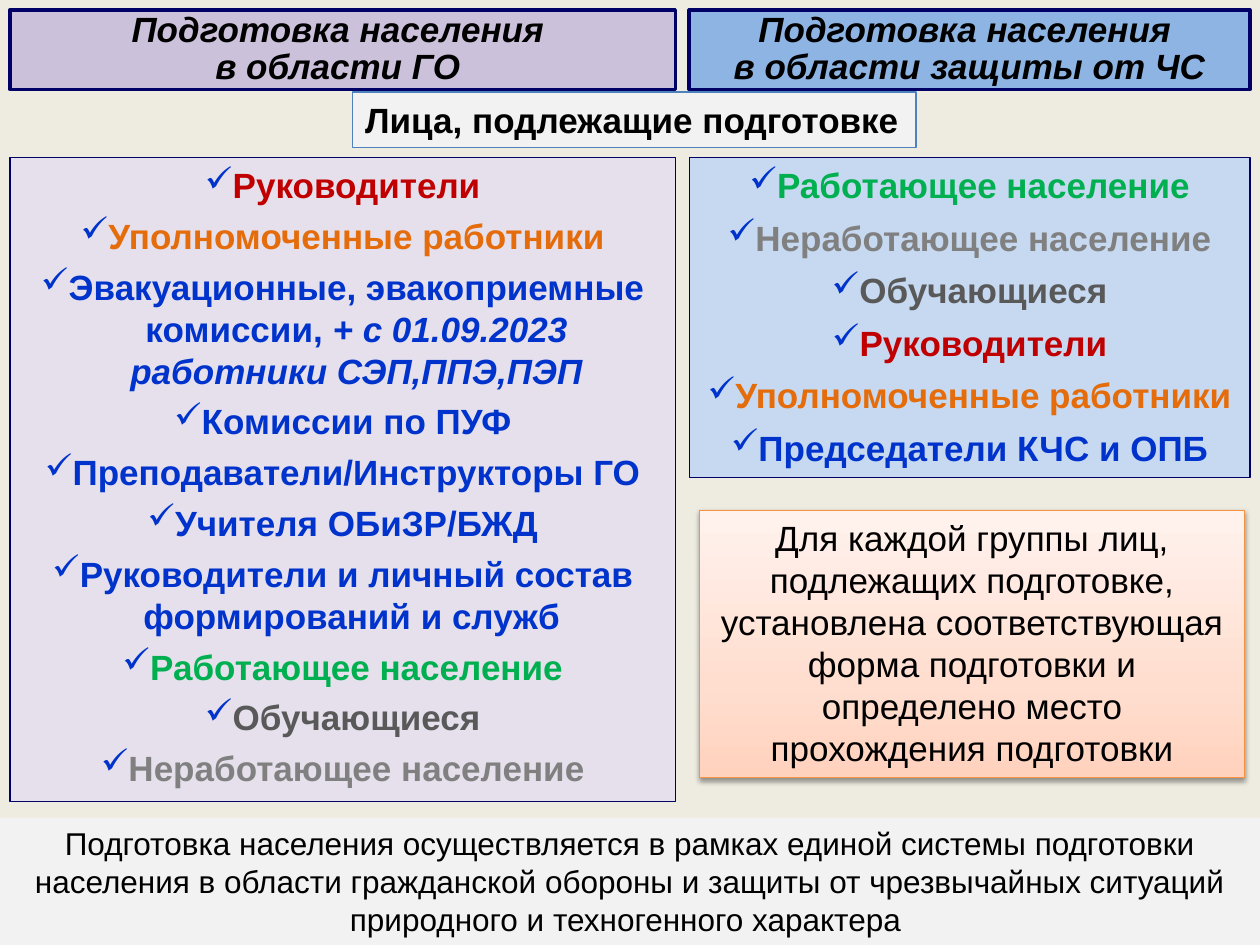
from lxml import etree
from pptx import Presentation
from pptx.dml.color import RGBColor
from pptx.enum.shapes import MSO_SHAPE
from pptx.enum.text import MSO_ANCHOR, MSO_AUTO_SIZE, PP_ALIGN
from pptx.oxml import parse_xml
from pptx.oxml.ns import nsdecls, qn
from pptx.util import Inches, Pt

RECT = MSO_SHAPE.RECTANGLE
CENTER, LEFT = PP_ALIGN.CENTER, PP_ALIGN.LEFT
MIDDLE, TOP = MSO_ANCHOR.MIDDLE, MSO_ANCHOR.TOP
GROW, FIXED = MSO_AUTO_SIZE.SHAPE_TO_FIT_TEXT, MSO_AUTO_SIZE.NONE

FONT = "Arial"
NAVY, BLUE, BLACK, PALE = "000066", "0033CC", "000000", "F2F2F2"
RED, ORANGE, GREEN, DARK, GRAY = "C00000", "E46C0A", "00B050", "595959", "808080"

W, H = 10, 7.5
MARGIN, GAP, LEFT_W = 0.08, 0.11, 5.28
RIGHT_X = MARGIN + LEFT_W + GAP
RIGHT_W = W - MARGIN - RIGHT_X
HEAD_H, LIST_Y, FOOTER_Y = 0.63, 1.25, 6.49

COLUMNS = [
    dict(x=MARGIN, w=LEFT_W, head_fill="CCC1DA", list_fill="E6E0EC", list_h=5.11, after=5,
         head=["Подготовка населения ", "в области ГО "],
         people=[
             ("Руководители", RED),
             ("Уполномоченные работники", ORANGE),
             ("Эвакуационные, эвакоприемные комиссии, ", BLUE,
              "+ с 01.09.2023 работники СЭП,ППЭ,ПЭП"),
             ("Комиссии по ПУФ", BLUE),
             ("Преподаватели/Инструкторы ГО", BLUE),
             ("Учителя ОБиЗР/БЖД", BLUE),
             ("Руководители и личный состав формирований и служб ", BLUE),
             ("Работающее население", GREEN),
             ("Обучающиеся", DARK),
             ("Неработающее население", GRAY),
         ]),
    dict(x=RIGHT_X, w=RIGHT_W, head_fill="8EB4E3", list_fill="C6D9F1", list_h=2.54, after=6,
         head=["Подготовка населения ", "в области защиты от ЧС"],
         people=[
             ("Работающее население", GREEN),
             ("Неработающее население", GRAY),
             ("Обучающиеся", DARK),
             ("Руководители", RED),
             ("Уполномоченные работники", ORANGE),
             ("Председатели КЧС и ОПБ", BLUE),
         ]),
]
SUBTITLE = "Лица, подлежащие подготовке"
NOTE = ("Для каждой группы лиц, подлежащих подготовке, установлена соответствующая "
        "форма подготовки и определено место прохождения подготовки")
NOTE_STOPS = [(0, "FFD2BD"), (35, "FFDED0"), (100, "FFF2ED")]
FOOTER = ("Подготовка населения осуществляется в рамках единой системы подготовки населения "
          "в области гражданской обороны и защиты от чрезвычайных ситуаций "
          "природного и техногенного характера ")


def rgb(color):
    return RGBColor.from_string(color)


def add_box(x, y, w, h, fill, line=None, weight=0.75, anchor=TOP, size=GROW, wrap=True):
    sp = slide.shapes.add_shape(RECT, Inches(x), Inches(y), Inches(w), Inches(h))
    sp.shadow.inherit = False
    sp.fill.solid()
    sp.fill.fore_color.rgb = rgb(fill)
    if line:
        sp.line.color.rgb = rgb(line)
        sp.line.width = Pt(weight)
    else:
        sp.line.fill.background()
    tf = sp.text_frame
    tf.word_wrap = wrap
    tf.auto_size = size
    tf.vertical_anchor = anchor
    return sp


def add_run(p, text, size=20, color=BLACK, bold=False, italic=False):
    r = p.add_run()
    r.text = text
    r.font.name, r.font.size = FONT, Pt(size)
    r.font.bold, r.font.italic = bold, italic
    r.font.color.rgb = rgb(color)


def add_paragraphs(sp, count, align=CENTER):
    tf = sp.text_frame
    paragraphs = [tf.paragraphs[0]] + [tf.add_paragraph() for _ in range(count - 1)]
    for p in paragraphs:
        p.alignment = align
    return paragraphs


def add_check(p):
    pPr = p._p.get_or_add_pPr()
    indent = Inches(0.22)
    pPr.set("marL", str(indent))
    pPr.set("indent", str(-indent))
    bullet_color = etree.SubElement(pPr, qn("a:buClr"))
    etree.SubElement(bullet_color, qn("a:srgbClr"), val=BLUE)
    etree.SubElement(pPr, qn("a:buChar"), char="✓")


def add_gradient(sp, stops):
    sp.fill.gradient()
    sp.fill.gradient_angle = 90
    stop_list = sp._element.spPr.find(".//" + qn("a:gsLst"))
    for old in list(stop_list):
        stop_list.remove(old)
    for pos, color in stops:
        stop = etree.SubElement(stop_list, qn("a:gs"), pos=str(pos * 1000))
        etree.SubElement(stop, qn("a:srgbClr"), val=color)


def add_shadow(sp):
    sp._element.spPr.find(qn("a:effectLst")).append(parse_xml(
        f'<a:outerShdw {nsdecls("a")} blurRad="{Pt(3.1)}" dist="{Pt(1.6)}" dir="5400000" '
        f'rotWithShape="0"><a:srgbClr val="{BLACK}"><a:alpha val="38000"/></a:srgbClr>'
        '</a:outerShdw>'))


prs = Presentation()
prs.slide_width, prs.slide_height = Inches(W), Inches(H)
slide = prs.slides.add_slide(prs.slide_layouts[6])
slide.background.fill.solid()
slide.background.fill.fore_color.rgb = rgb("EEECE1")

for col in COLUMNS:
    box = add_box(col["x"], LIST_Y, col["w"], col["list_h"], col["list_fill"], NAVY)
    for p, (text, color, *extra) in zip(add_paragraphs(box, len(col["people"])), col["people"]):
        p.space_after = Pt(col["after"])
        add_check(p)
        add_run(p, text, color=color, bold=True)
        for more in extra:
            add_run(p, more, color=color, bold=True, italic=True)

    head = add_box(col["x"], MARGIN, col["w"], HEAD_H, col["head_fill"], NAVY, 2, MIDDLE, FIXED)
    for p, text in zip(add_paragraphs(head, len(col["head"])), col["head"]):
        p.line_spacing = 0.9
        add_run(p, text, bold=True, italic=True)

subtitle = add_box(2.8, 0.73, 4.47, 0.44, PALE, "4F81BD", wrap=False)
add_run(add_paragraphs(subtitle, 1, LEFT)[0], SUBTITLE, bold=True)

footer = add_box(0, FOOTER_Y, W, H - FOOTER_Y, PALE)
add_run(add_paragraphs(footer, 1)[0], FOOTER, size=18)

note = add_box(5.55, 4.05, 4.33, 2.12, PALE, "F69240")
add_gradient(note, NOTE_STOPS)
add_shadow(note)
add_run(add_paragraphs(note, 1)[0], NOTE)

prs.save("out.pptx")
